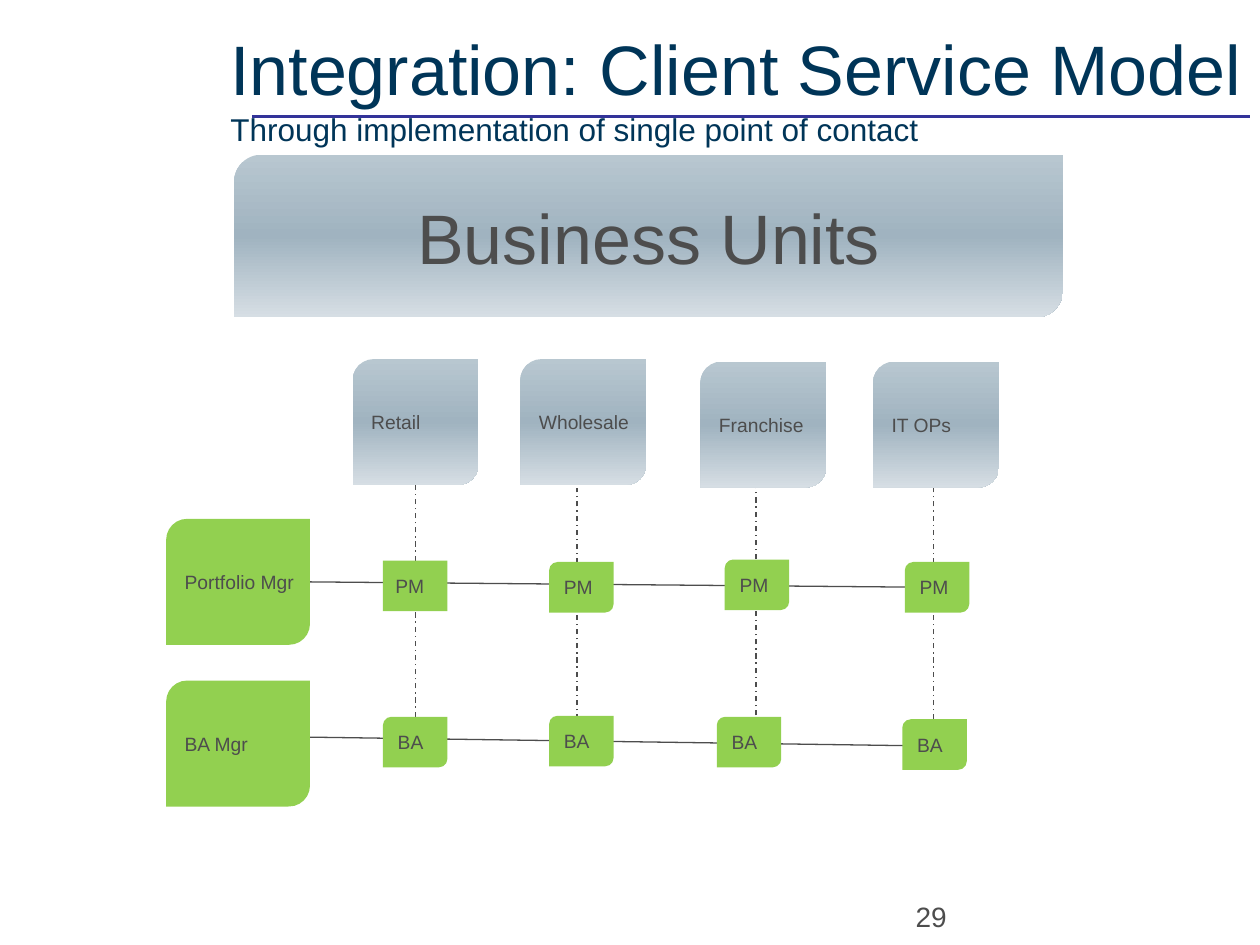
from copy import deepcopy

from lxml import etree
from pptx import Presentation
from pptx.dml.color import RGBColor
from pptx.enum import dml, shapes, text
from pptx.oxml.ns import qn
from pptx.util import Cm, Pt

NAVY, GREY, GREEN, VIOLET = "003558", "4D4D4D", "92D050", "333399"
STEEL = ["B8C7D0", "A0B3C0", "D6DEE4"]


def colour(value):
    return RGBColor.from_string(value)


def add_block(label, left, top, width, height, fill=GREEN, size=11):
    """Add a labelled box; a list of three colours as fill makes a vertical gradient."""
    box = page.shapes.add_shape(shapes.MSO_SHAPE.ROUND_2_DIAG_RECTANGLE,
                                Cm(left), Cm(top), Cm(width), Cm(height))
    box.shadow.inherit = False
    box.line.fill.background()
    if isinstance(fill, list):
        box.fill.gradient()
        box.fill.gradient_angle = 270
        first = box.fill._fill._gradFill.find(qn("a:gsLst"))[0]
        first.addnext(deepcopy(first))
        for stop, value, position in zip(box.fill.gradient_stops, fill, (0, 0.5, 1)):
            stop.color.rgb = colour(value)
            stop.position = position
    else:
        box.fill.solid()
        box.fill.fore_color.rgb = colour(fill)
    frame = box.text_frame
    frame.word_wrap = False
    frame.vertical_anchor = text.MSO_ANCHOR.MIDDLE
    frame.text = label
    para = frame.paragraphs[0]
    para.alignment = text.PP_ALIGN.LEFT
    para.font.name, para.font.size = "Arial", Pt(size)
    para.font.color.rgb = colour(GREY)
    return box


deck = Presentation()
deck.slide_width, deck.slide_height = Cm(25.4), Cm(19.05)
page = deck.slides.add_slide(deck.slide_layouts[5])

# Lines: title rule, two manager rails, four business unit stems
DASH = dml.MSO_LINE.DASH_DOT
lines = [
    (5.08, 2.34, 25.2, 2.34, VIOLET, 1.75, None),
    (6.25, 14.86, 18.87, 15.04, GREY, 0.75, None),
    (6.25, 11.73, 18.87, 11.84, GREY, 0.75, None),
]
for x, top in [(8.38, 9.78), (11.63, 9.83), (15.24, 9.75), (18.82, 9.83)]:
    lines.append((x, top + 4.67, x, top, GREY, 0.75, DASH))
for x1, y1, x2, y2, value, weight, dash in lines:
    line = page.shapes.add_connector(shapes.MSO_CONNECTOR.STRAIGHT,
                                     Cm(x1), Cm(y1), Cm(x2), Cm(y2))
    line.line.color.rgb = colour(value)
    line.line.width = Pt(weight)
    if dash:
        line.line.dash_style = dash
    etree.SubElement(line._element.spPr, qn("a:effectLst"))

# Title, in front of its rule
title = page.shapes.title
title.element.getparent().append(title.element)
title.left, title.top, title.width, title.height = Cm(4.39), Cm(0.76), Cm(21.16), Cm(1.98)
frame = title.text_frame
frame.auto_size = text.MSO_AUTO_SIZE.NONE
frame.vertical_anchor = text.MSO_ANCHOR.MIDDLE
para = frame.paragraphs[0]
para.alignment = text.PP_ALIGN.LEFT
para.font.name = "Arial"
para.font.color.rgb = colour(NAVY)
span = para.add_run()
span.text, span.font.size = "Integration: Client Service Model", Pt(40)
para.add_line_break()
span = para.add_run()
span.text, span.font.size = "Through implementation of single point of contact", Pt(18)

# Business units
banner = add_block("Business Units", 4.72, 3.12, 16.71, 3.28, STEEL, 40)
banner.text_frame.paragraphs[0].alignment = text.PP_ALIGN.CENTER
for label, left, top in [("Retail", 7.11, 7.24), ("Wholesale", 10.49, 7.24),
                         ("Franchise", 14.12, 7.29), ("IT OPs", 17.6, 7.29)]:
    add_block(label, left, top, 2.54, 2.54, STEEL)

# Managers and their staff in each unit
for label, top in [("Portfolio Mgr", 10.46), ("BA Mgr", 13.72)]:
    add_block(label, 3.35, top, 2.9, 2.54)
staff = {
    "PM": [(7.72, 11.3), (11.07, 11.33), (14.61, 11.28), (18.24, 11.33)],
    "BA": [(7.72, 14.45), (11.07, 14.43), (14.45, 14.45), (18.19, 14.5)],
}
for role, places in staff.items():
    for left, top in places:
        box = add_block(role, left, top, 1.3, 1.02)
        if (role, left) == ("PM", 7.72):
            box.adjustments[0] = 0

# Page number
number = page.shapes.add_textbox(Cm(18.21), Cm(18.01), Cm(5.92), Cm(1.02))
number.text_frame.word_wrap = True
number.text_frame.text = "29"
para = number.text_frame.paragraphs[0]
para.font.name, para.font.size = "Arial", Pt(16)
para.font.color.rgb = colour(GREY)

deck.save("out.pptx")
